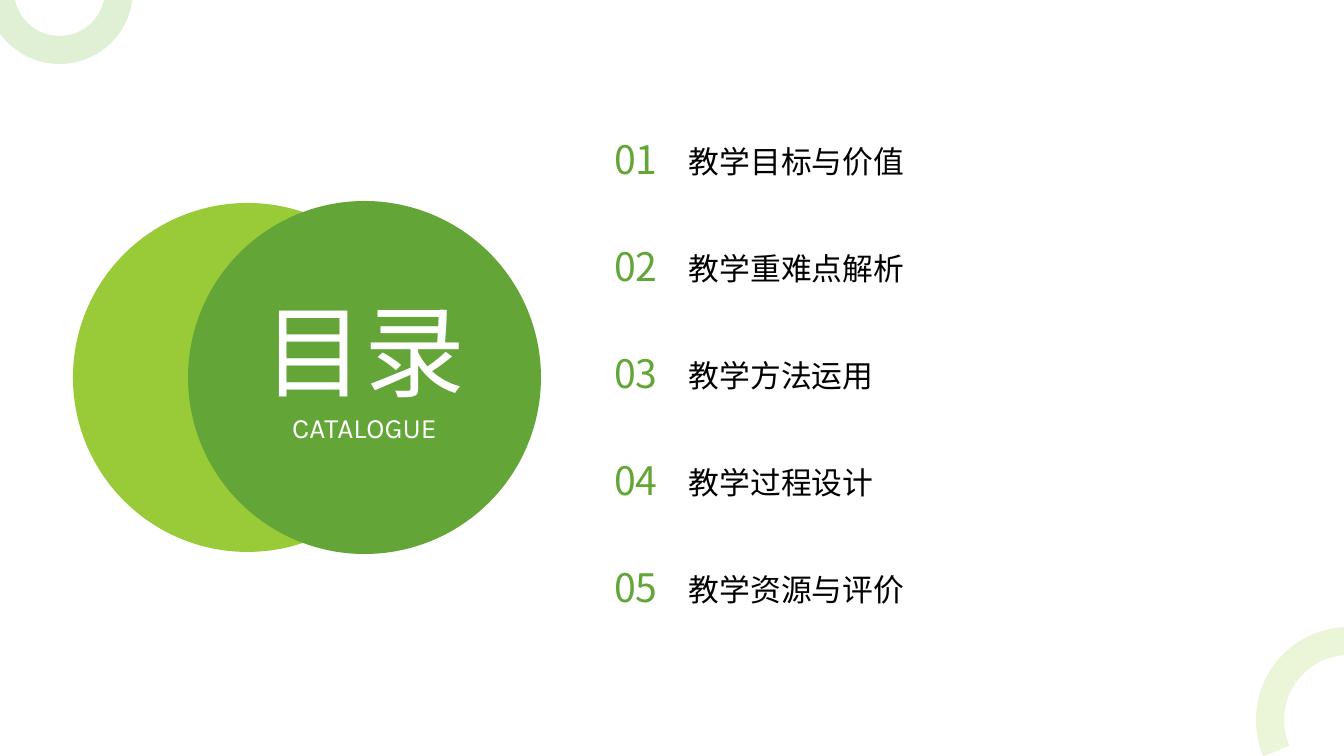
from dataclasses import dataclass

from lxml.etree import SubElement
from pptx import Presentation
from pptx.dml.color import RGBColor
from pptx.enum.shapes import MSO_SHAPE as Shape
from pptx.enum.text import MSO_ANCHOR as Anchor, MSO_AUTO_SIZE as AutoSize, PP_ALIGN as Align
from pptx.oxml.ns import qn
from pptx.util import Emu, Pt


@dataclass(frozen=True)
class Theme:
    green: str = "63A537"
    lime: str = "99CB38"
    pale_green: str = "DFF0D4"
    pale_lime: str = "EBF5D7"
    white: str = "FFFFFF"
    black: str = "000000"
    latin: str = "Karla"
    chinese: str = "Noto Sans CJK SC"
    title: int = 72
    subtitle: int = 20
    number: int = 28
    topic: int = 22
    ring: int = 20


class CataloguePage:
    """Holds the theme and the slide, and draws each kind of element."""

    def __init__(self, page, theme):
        self.page = page
        self.theme = theme

    @staticmethod
    def px(length):
        return Emu(round(length * 914400 / 100.8))

    def shape(self, kind, left, top, size):
        shape = self.page.shapes.add_shape(kind, *map(self.px, (left, top, size, size)))
        shape.shadow.inherit = False
        return shape

    def disc(self, left, top, size, color):
        disc = self.shape(Shape.OVAL, left, top, size)
        disc.fill.solid()
        disc.fill.fore_color.rgb = RGBColor.from_string(color)
        disc.line.fill.background()

    def ring(self, left, top, size, start, end, color):
        ring = self.shape(Shape.ARC, left, top, size)
        ring.adjustments[0] = start * 0.6
        ring.adjustments[1] = end * 0.6
        ring.fill.background()
        ring.line.color.rgb = RGBColor.from_string(color)
        ring.line.width = Pt(self.theme.ring)

    def text(self, words, area, size, color, font, spacing=1.0,
             align=Align.LEFT, anchor=Anchor.MIDDLE, grow=False):
        box = self.page.shapes.add_textbox(*map(self.px, area))
        frame = box.text_frame
        frame.margin_left = frame.margin_top = frame.margin_right = frame.margin_bottom = 0
        frame.word_wrap = True
        frame.auto_size = AutoSize.SHAPE_TO_FIT_TEXT if grow else AutoSize.NONE
        frame.vertical_anchor = anchor
        para = frame.paragraphs[0]
        para.alignment = align
        para.line_spacing = spacing
        span = para.add_run()
        span.text = words
        span.font.size = Pt(size)
        span.font.color.rgb = RGBColor.from_string(color)
        span.font.name = font
        SubElement(span.font._element, qn("a:ea"), typeface=self.theme.chinese)

    def heading(self, words, area, size):
        self.text(words, area, size, self.theme.white, self.theme.latin,
                  spacing=1.1, align=Align.CENTER, grow=True)

    def entry(self, number, topic, top):
        theme = self.theme
        self.text(f"{number:02}", (614, top, 56, 47), theme.number, theme.green, theme.chinese)
        self.text(topic, (689, top, 596, 80), theme.topic, theme.black, theme.chinese,
                  spacing=1.2, anchor=Anchor.TOP)


def main():
    theme = Theme()
    deck = Presentation()
    deck.slide_width, deck.slide_height = map(CataloguePage.px, (1344, 756))
    catalogue = CataloguePage(deck.slides.add_slide(deck.slide_layouts[6]), theme)

    catalogue.disc(73, 203, 349, theme.lime)
    catalogue.ring(0, -69, 119, 287.8, 180, theme.pale_green)
    catalogue.disc(188, 201, 353, theme.green)
    catalogue.ring(1270, 641, 158, 156.78, 72.2, theme.pale_lime)
    catalogue.heading("目录", (231, 288, 267, 111), theme.title)
    catalogue.heading("CATALOGUE", (235, 410, 259, 31), theme.subtitle)

    topics = ("教学目标与价值", "教学重难点解析", "教学方法运用", "教学过程设计", "教学资源与评价")
    for index, topic in enumerate(topics):
        catalogue.entry(index + 1, topic, 135 + 107 * index)

    deck.save("out.pptx")


if __name__ == "__main__":
    main()
